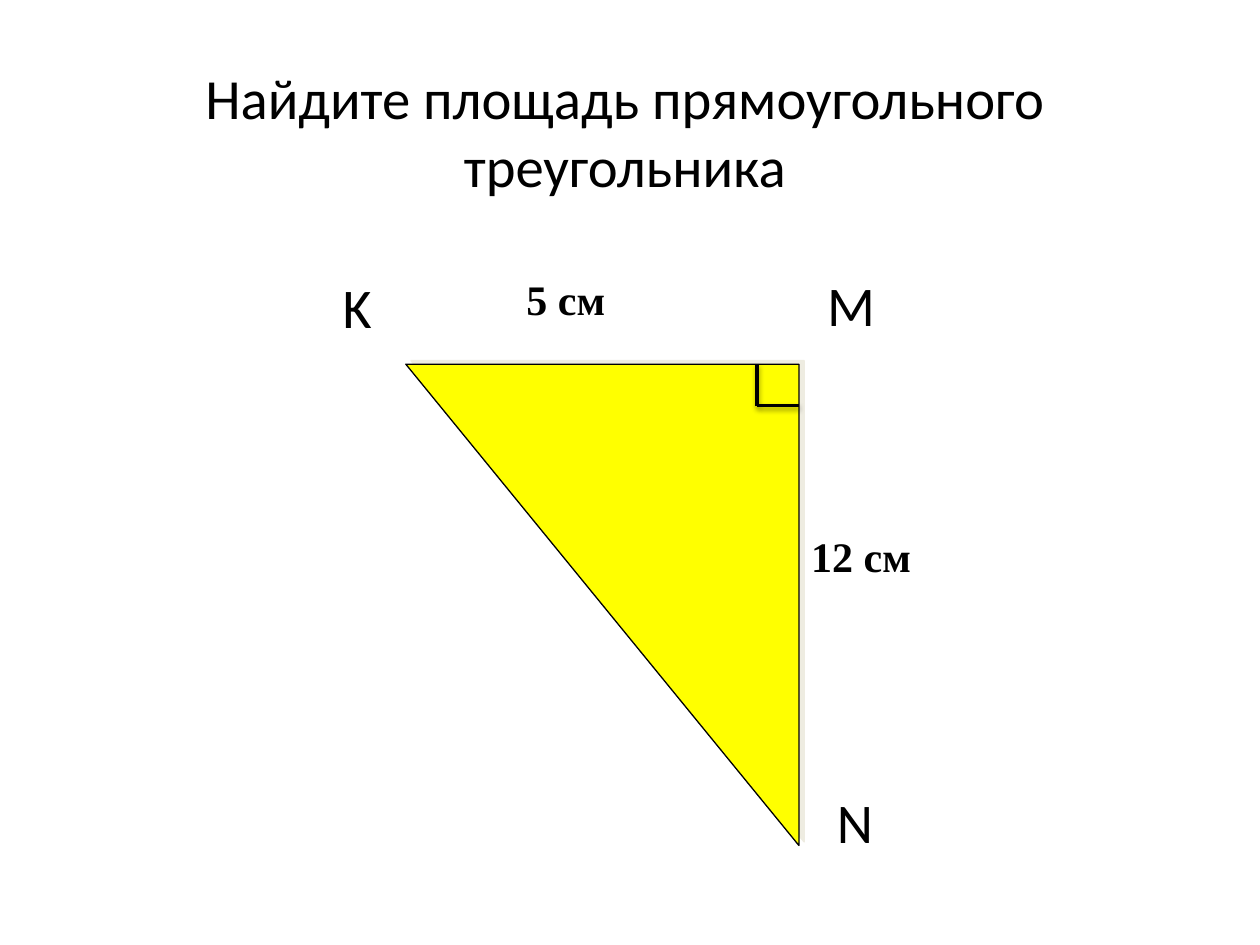
from lxml.etree import SubElement
from pptx import Presentation
from pptx.dml.color import RGBColor
from pptx.enum.shapes import MSO_CONNECTOR, MSO_SHAPE
from pptx.enum.text import MSO_ANCHOR, MSO_AUTO_SIZE, PP_ALIGN
from pptx.oxml.ns import qn
from pptx.util import Inches, Pt

BLACK = RGBColor(0x00, 0x00, 0x00)
YELLOW = RGBColor(0xFF, 0xFF, 0x00)
CREAM = RGBColor(0xEE, 0xEC, 0xE1)

TITLE_FONT = {"name": "Calibri", "size": Pt(32.4), "bold": False}
VERTEX_FONT = {"name": "Calibri", "size": Pt(32), "bold": False}
LENGTH_FONT = {"name": "Times New Roman", "size": Pt(24), "bold": True}


def format_text(frame, text, font, align, **layout):
    frame.text = text
    for name, value in layout.items():
        setattr(frame, name, value)
    paragraph = frame.paragraphs[0]
    paragraph.alignment = align
    run_font = paragraph.runs[0].font
    for name, value in font.items():
        setattr(run_font, name, value)
    run_font.color.rgb = BLACK


def add_shadow(shape, color, opacity, blur, distance, angle):
    effects = SubElement(shape._element.spPr, qn("a:effectLst"))
    shadow = SubElement(effects, qn("a:outerShdw"), {
        "blurRad": str(Pt(blur)), "dist": str(Pt(distance)),
        "dir": str(angle * 60000), "algn": "ctr", "rotWithShape": "0"})
    shade = SubElement(shadow, qn("a:srgbClr"), val=str(color))
    SubElement(shade, qn("a:alpha"), val=str(opacity * 1000))


def place_title(slide, left, top, width, height):
    title = slide.shapes.title
    box = {"left": left, "top": top, "width": width, "height": height}
    for name, value in box.items():
        setattr(title, name, Inches(value))
    format_text(title.text_frame, "Найдите площадь прямоугольного треугольника",
                TITLE_FONT, PP_ALIGN.CENTER, word_wrap=True,
                auto_size=MSO_AUTO_SIZE.NONE, vertical_anchor=MSO_ANCHOR.MIDDLE)


def add_right_triangle(shapes, left, top, width, height):
    inset = (height - width) / 2
    triangle = shapes.add_shape(
        MSO_SHAPE.RIGHT_TRIANGLE, Inches(left - inset), Inches(top + inset),
        Inches(height), Inches(width))
    triangle.rotation = 270
    triangle._element.spPr.xfrm.set("flipH", "1")
    triangle.fill.solid()
    triangle.fill.fore_color.rgb = YELLOW
    triangle.line.color.rgb = BLACK
    triangle.line.width = Pt(0.75)
    add_shadow(triangle, CREAM, 100, 0, 3.6, 326)


def add_angle_mark(shapes, corner_x, corner_y, size):
    inner_x, inner_y = corner_x - size, corner_y + size
    for start_x, start_y in ((corner_x, inner_y), (inner_x, corner_y)):
        side = shapes.add_connector(
            MSO_CONNECTOR.STRAIGHT, Inches(start_x), Inches(start_y),
            Inches(inner_x), Inches(inner_y))
        side.line.color.rgb = BLACK
        side.line.width = Pt(2)
        add_shadow(side, BLACK, 38, 3.1, 1.6, 90)


def place_figure(slide, left, top, width, height):
    shapes = slide.shapes.add_group_shape().shapes
    right, bottom = left + width, top + height
    add_right_triangle(shapes, left, top, width, height)
    labels = (
        ("5 см", left + 0.86, top - 0.77, 1.5, 0.97, LENGTH_FONT, PP_ALIGN.LEFT, True),
        ("12 см", right, top + 1.27, 1.5, 0.5, LENGTH_FONT, PP_ALIGN.LEFT, True),
        ("K", left - 0.76, top - 0.78, 0.75, 1.01, VERTEX_FONT, PP_ALIGN.CENTER, False),
        ("M", right - 0.06, top - 0.79, 0.95, 1.01, VERTEX_FONT, PP_ALIGN.CENTER, False),
        ("N", right, bottom - 0.51, 0.89, 1.01, VERTEX_FONT, PP_ALIGN.CENTER, False),
    )
    for text, *box, font, align, wrap in labels:
        label = shapes.add_textbox(*map(Inches, box))
        format_text(label.text_frame, text, font, align, word_wrap=wrap,
                    vertical_anchor=MSO_ANCHOR.TOP)
    add_angle_mark(shapes, right, top, 0.33)


def main():
    deck = Presentation()
    deck.slide_width, deck.slide_height = Inches(10), Inches(7.5)
    slide = deck.slides.add_slide(deck.slide_layouts.get_by_name("Title Only"))
    place_title(slide, 0.75, 0.46, 8.42, 1.16)
    place_figure(slide, 3.22, 2.89, 3.12, 3.82)
    deck.save("out.pptx")


if __name__ == "__main__":
    main()
